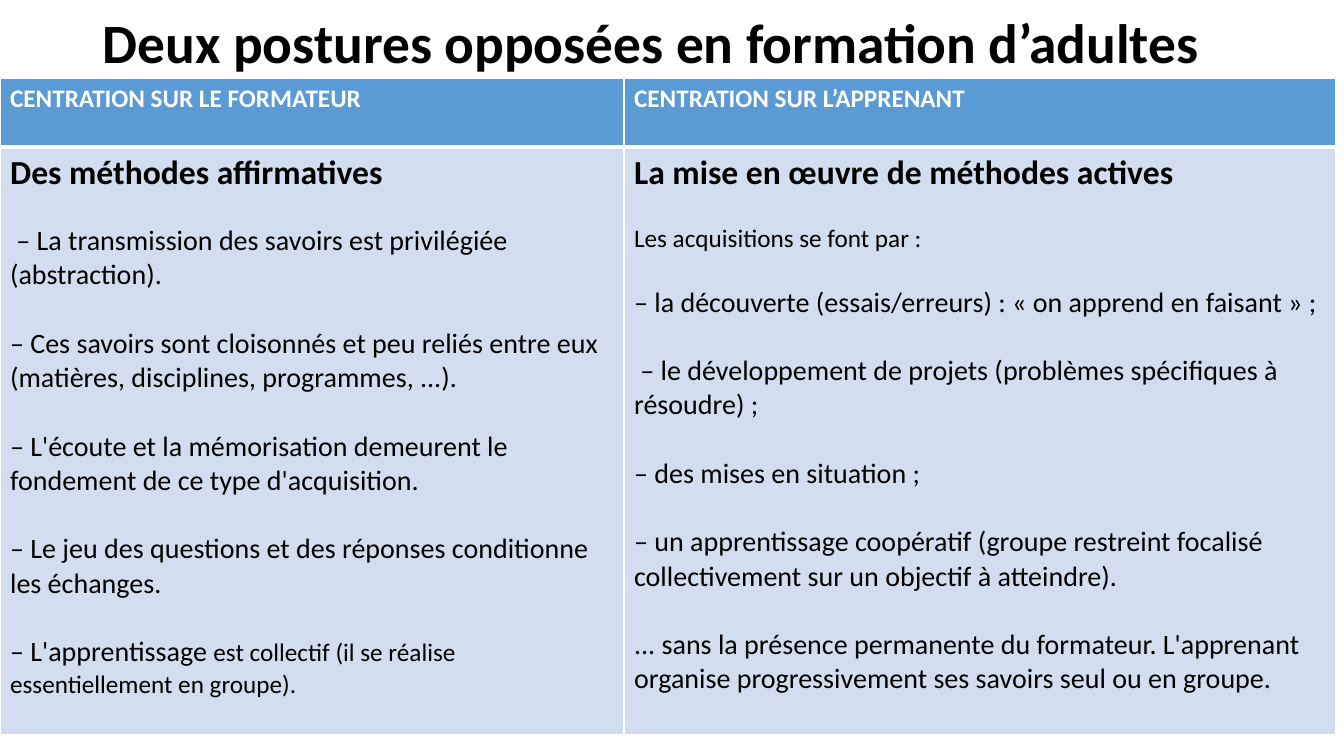
from dataclasses import dataclass

from lxml import etree
from pptx import Presentation
from pptx.dml.color import RGBColor
from pptx.enum.text import MSO_ANCHOR
from pptx.oxml.ns import qn
from pptx.slide import Slide
from pptx.table import _Cell
from pptx.text.text import _Paragraph, _Run
from pptx.util import Inches, Pt

MIDDLE = MSO_ANCHOR.MIDDLE
BLACK = RGBColor(0x00, 0x00, 0x00)
WHITE = RGBColor(0xFF, 0xFF, 0xFF)
HEADER_BLUE = RGBColor(0x5B, 0x9B, 0xD5)
BODY_BLUE = RGBColor(0xD2, 0xDE, 0xEF)

FONT = "Calibri"
SLIDE_WIDTH, SLIDE_HEIGHT = Inches(13.33), Inches(7.5)
COLUMN, ROW = SLIDE_WIDTH / 100, SLIDE_HEIGHT / 100
COLUMN_SPANS = (46.43, 52.96)
ROW_SPANS = (9.07, 77.73)
TABLE_TOP = 10.4
LINE_FACTOR = 1.22
THIN, THICK = 1, 3

TITLE = "Deux postures opposées en formation d’adultes"


@dataclass(frozen=True)
class Line:
    text: str
    size: float = 20
    gap: float = 20
    bold: bool = False
    ending: str = ""
    ending_size: float = 18


@dataclass(frozen=True)
class Posture:
    header: str
    lines: tuple[Line, ...]


POSTURES = (
    Posture("CENTRATION SUR LE FORMATEUR", (
        Line("Des méthodes affirmatives", 24, 0, True),
        Line(" – La transmission des savoirs est privilégiée (abstraction).", gap=18),
        Line("– Ces savoirs sont cloisonnés et peu reliés entre eux "
             "(matières, disciplines, programmes, ...)."),
        Line("– L'écoute et la mémorisation demeurent le fondement "
             "de ce type d'acquisition."),
        Line("– Le jeu des questions et des réponses conditionne les échanges."),
        Line("– L'apprentissage ",
             ending="est collectif (il se réalise essentiellement en groupe)."),
    )),
    Posture("CENTRATION SUR L’APPRENANT", (
        Line("La mise en œuvre de méthodes actives", 24, 0, True),
        Line("Les acquisitions se font par :", 18, 18),
        Line("– la découverte (essais/erreurs) : « on apprend en faisant » ;", gap=18),
        Line(" – le développement de projets (problèmes spécifiques à résoudre) ;"),
        Line("– des mises en situation ;"),
        Line("– un apprentissage coopératif (groupe restreint focalisé "
             "collectivement sur un objectif à atteindre)."),
        Line("... sans la présence permanente du formateur. L'apprenant "
             "organise progressivement ses savoirs seul ou en groupe."),
    )),
)


def columns(count: float) -> int:
    return round(count * COLUMN)


def rows(count: float) -> int:
    return round(count * ROW)


def format_run(run: _Run, size: float, color: RGBColor, bold: bool) -> None:
    run.font.name = FONT
    run.font.size = Pt(size)
    run.font.color.rgb = color
    run.font.bold = bold


def write_line(paragraph: _Paragraph, line: Line, color: RGBColor) -> None:
    paragraph.text = line.text
    paragraph.space_before = Pt(line.gap * LINE_FACTOR)
    format_run(paragraph.runs[0], line.size, color, line.bold)
    if line.ending:
        ending = paragraph.add_run()
        ending.text = line.ending
        format_run(ending, line.ending_size, color, line.bold)


def add_borders(cell: _Cell, top: float, bottom: float) -> None:
    properties = cell._tc.get_or_add_tcPr()
    for side, width in (("L", THIN), ("R", THIN), ("T", top), ("B", bottom)):
        border = etree.SubElement(properties, qn(f"a:ln{side}"), w=str(Pt(width)))
        fill = etree.SubElement(border, qn("a:solidFill"))
        etree.SubElement(fill, qn("a:srgbClr"), val=str(WHITE))


def fill_cell(cell: _Cell, lines: tuple[Line, ...], color: RGBColor,
              background: RGBColor, top: float, bottom: float) -> None:
    add_borders(cell, top, bottom)
    cell.fill.solid()
    cell.fill.fore_color.rgb = background
    frame = cell.text_frame
    for index, line in enumerate(lines):
        paragraph = frame.add_paragraph() if index else frame.paragraphs[0]
        write_line(paragraph, line, color)


def add_title(slide: Slide) -> None:
    title = slide.shapes.add_textbox(columns(6.9), 0, columns(86.25), rows(12))
    frame = title.text_frame
    frame.word_wrap = True
    frame.vertical_anchor = MIDDLE
    frame.text = TITLE
    heading = frame.paragraphs[0]
    heading.line_spacing = 0.9
    format_run(heading.runs[0], 39.6, BLACK, True)


def add_comparison(slide: Slide) -> None:
    comparison = slide.shapes.add_table(
        len(ROW_SPANS), len(POSTURES), 0, rows(TABLE_TOP),
        columns(sum(COLUMN_SPANS)), rows(sum(ROW_SPANS))).table
    comparison.horz_banding = False
    for table_row, span in zip(comparison.rows, ROW_SPANS):
        table_row.height = rows(span)
    for index, (posture, span) in enumerate(zip(POSTURES, COLUMN_SPANS)):
        comparison.columns[index].width = columns(span)
        header = (Line(posture.header, 18, 0, True),)
        fill_cell(comparison.cell(0, index), header, WHITE, HEADER_BLUE, THIN, THICK)
        fill_cell(comparison.cell(1, index), posture.lines, BLACK, BODY_BLUE, THICK, THIN)


def main() -> None:
    presentation = Presentation()
    presentation.slide_width = SLIDE_WIDTH
    presentation.slide_height = SLIDE_HEIGHT
    slide = presentation.slides.add_slide(presentation.slide_layouts[6])
    add_title(slide)
    add_comparison(slide)
    presentation.save("out.pptx")


if __name__ == "__main__":
    main()
